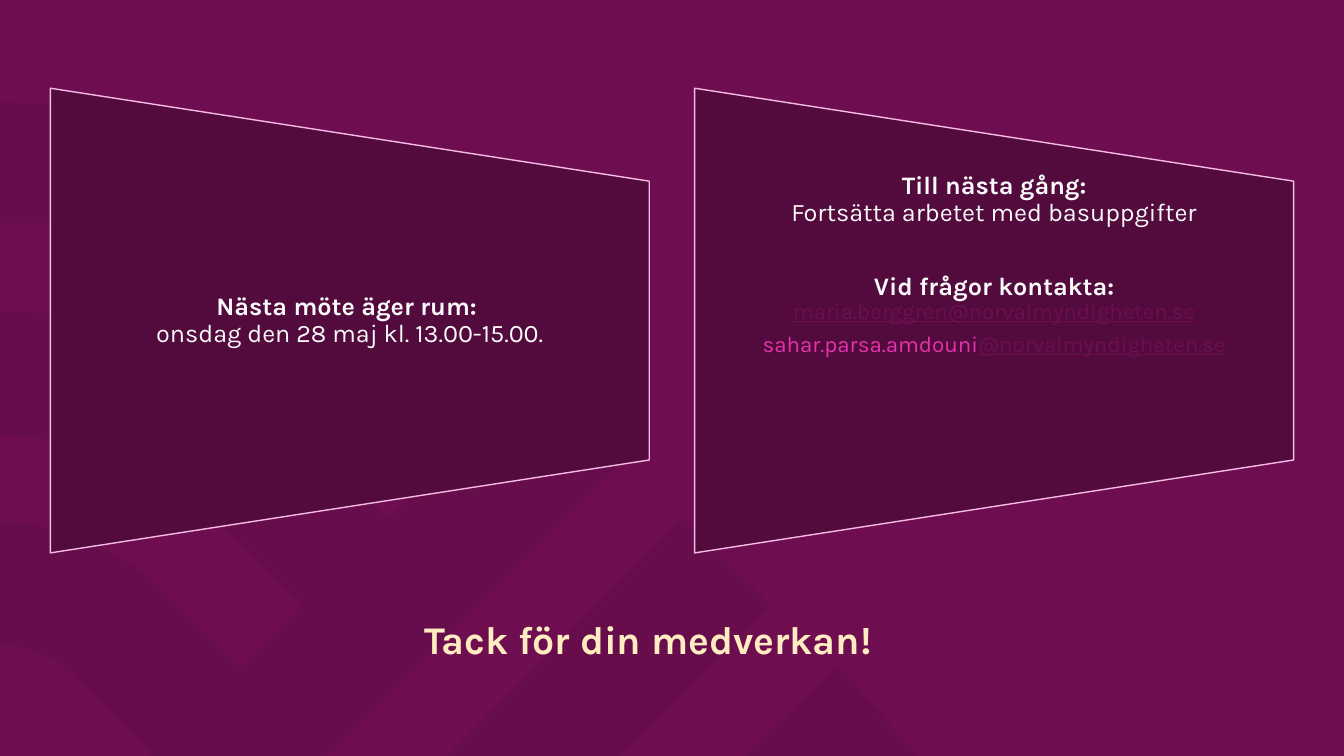
from dataclasses import dataclass
from lxml import etree
from pptx import Presentation, util as u
from pptx.dml.color import RGBColor
from pptx.enum import shapes, text
from pptx.oxml.ns import qn

WIDE, HIGH = 13.33, 7.5
FONT = "Karla"
PLUM, DARK, ROSE, PINK = "6E0E50", "520B3C", "F6BBE4", "E532AD"
WHITE, CREAM, SHADE = "FAFAFA", "FFECC1", "370728"
SPAN, TALL, TIP = 5.94, 4.61, 2.77  # panel width, long side, short side
LEFT, STEP, MID = 0.5, 6.39, 3.18
HOST = "@norvalmyndigheten.se"


@dataclass
class Run:
    words: str
    bold: bool = False
    size: int = 18
    hue: str = WHITE
    under: bool = False


@dataclass
class Para:
    lines: list[list[Run]]
    gap: int = 0


@dataclass
class Panel:
    paras: list[Para]
    foot: float = 0


PANELS = [
    Panel([Para([[Run("Nästa möte äger rum: ", True)],
                 [Run("onsdag den 28 maj kl. 13.00-15.00.")]])]),
    Panel([
        Para([[Run("Till nästa gång:", True)],
              [Run("Fortsätta arbetet med basuppgifter")]]),
        Para([[Run("Vid frågor kontakta:", True)],
              [Run("maria.berggren" + HOST, False, 16, PLUM, True)]], 33),
        Para([[Run("sahar.parsa.amdouni", False, 16, PINK),
               Run(HOST, False, 16, PLUM, True)]], 6),
    ], 1.1),
]

# Each outline lists corners (x, y) and curves (two handles and an end).
BANDS = [
    [(8.31, 6.6), (9.1, 7.5), (7.39, 7.5)],
    [(6.77, 5.14), (7.65, 6.01), (6.16, 7.5), (4.43, 7.5)],
    [(0, 1.01), (0.58, 1.04), (2.03, 1.18, 3.44, 1.8, 4.54, 2.91), (6.19, 4.55),
     (3.24, 7.5), (1.48, 7.5), (1.51, 7.47), (0.74, 6.71),
     (0.59, 6.55, 0.4, 6.45, 0.2, 6.42), (0, 6.4), (0, 5.18), (0.02, 5.18),
     (0.6, 5.19, 1.18, 5.42, 1.62, 5.87), (2.39, 6.63), (3.01, 6.01), (2.24, 5.25),
     (2.21, 5.21), (1.75, 4.76, 1.18, 4.48, 0.59, 4.37), (0, 4.31), (0, 3.08),
     (0.4, 3.1), (1.38, 3.2, 2.33, 3.62, 3.08, 4.37), (3.85, 5.14), (4.47, 4.51),
     (3.7, 3.75), (2.84, 2.87, 1.71, 2.34, 0.53, 2.22), (0, 2.21)],
]


def tint(code: str) -> RGBColor:
    return RGBColor.from_string(code)


def put(item, **form) -> None:
    """Set attributes from format values."""
    for name, value in form.items():
        setattr(item, name, value)


def trace(band: list[tuple], parts: int = 16) -> list[tuple[int, int]]:
    """Turn corners and curves into points in EMU."""
    dots = [band[0]]
    for node in band[1:]:
        if len(node) == 2:
            dots.append(node)
            continue
        ends = [dots[-1], node[:2], node[2:4], node[4:]]
        for step in range(1, parts + 1):
            t = step / parts
            share = ((1 - t) ** 3, 3 * t * (1 - t) ** 2, 3 * t * t * (1 - t), t ** 3)
            dots.append(tuple(sum(s * e[i] for s, e in zip(share, ends)) for i in (0, 1)))
    return [(u.Inches(x), u.Inches(y)) for x, y in dots]


def draw_bands(slide) -> None:
    first, *rest = [trace(band) for band in BANDS]
    pen = slide.shapes.build_freeform(*first[0])
    pen.add_line_segments(first[1:])
    for dots in rest:
        pen.move_to(*dots[0])
        pen.add_line_segments(dots[1:])
    art = pen.convert_to_shape()
    art.shadow.inherit = False
    art.line.fill.background()
    art.fill.solid()
    art.fill.fore_color.rgb = tint(SHADE)
    hue = art._element.spPr.find(".//" + qn("a:srgbClr"))
    etree.SubElement(hue, qn("a:alpha"), val="10000")


def write(para, run: Run) -> None:
    part = para.add_run()
    part.text = run.words
    put(part.font, name=FONT, size=u.Pt(run.size), bold=run.bold, underline=run.under)
    part.font.color.rgb = tint(run.hue)


def draw_panel(slide, panel: Panel, col: int) -> None:
    left = LEFT + col * STEP
    form = slide.shapes.add_shape(
        shapes.MSO_SHAPE.FLOWCHART_MANUAL_OPERATION,
        u.Inches(left + (SPAN - TALL) / 2), u.Inches(MID - SPAN / 2),
        u.Inches(TALL), u.Inches(SPAN))
    form.rotation = 270
    form.shadow.inherit = False
    form.fill.solid()
    form.fill.fore_color.rgb = tint(DARK)
    form.line.color.rgb = tint(ROSE)
    form.line.width = u.Pt(1)

    box = slide.shapes.add_textbox(u.Inches(left), u.Inches(MID - TIP / 2),
                                   u.Inches(SPAN), u.Inches(TIP))
    frame = box.text_frame
    put(frame, word_wrap=True, vertical_anchor=text.MSO_ANCHOR.MIDDLE,
        margin_left=u.Inches(0.12), margin_right=u.Inches(0.12),
        margin_top=0, margin_bottom=u.Inches(panel.foot))
    for i, item in enumerate(panel.paras):
        para = frame.add_paragraph() if i else frame.paragraphs[0]
        put(para, alignment=text.PP_ALIGN.CENTER, line_spacing=0.9,
            space_before=u.Pt(item.gap))
        for j, line in enumerate(item.lines):
            if j:
                para.add_line_break()
            for run in line:
                write(para, run)


def draw_title(slide) -> None:
    title = slide.shapes.title
    put(title, left=u.Inches(4.11), top=u.Inches(6.05),
        width=u.Inches(5.1), height=u.Inches(0.57))
    put(title.text_frame, word_wrap=True, auto_size=text.MSO_AUTO_SIZE.NONE,
        vertical_anchor=text.MSO_ANCHOR.TOP)
    para = title.text_frame.paragraphs[0]
    para.alignment = text.PP_ALIGN.LEFT
    write(para, Run("Tack för din medverkan!", True, 28, CREAM))
    slide.shapes._spTree.append(title._element)  # bring to front


def main() -> None:
    deck = Presentation()
    put(deck, slide_width=u.Inches(WIDE), slide_height=u.Inches(HIGH))
    slide = deck.slides.add_slide(deck.slide_layouts[5])
    slide.background.fill.solid()
    slide.background.fill.fore_color.rgb = tint(PLUM)
    draw_bands(slide)
    for col, panel in enumerate(PANELS):
        draw_panel(slide, panel, col)
    draw_title(slide)
    deck.save("out.pptx")


if __name__ == "__main__":
    main()
